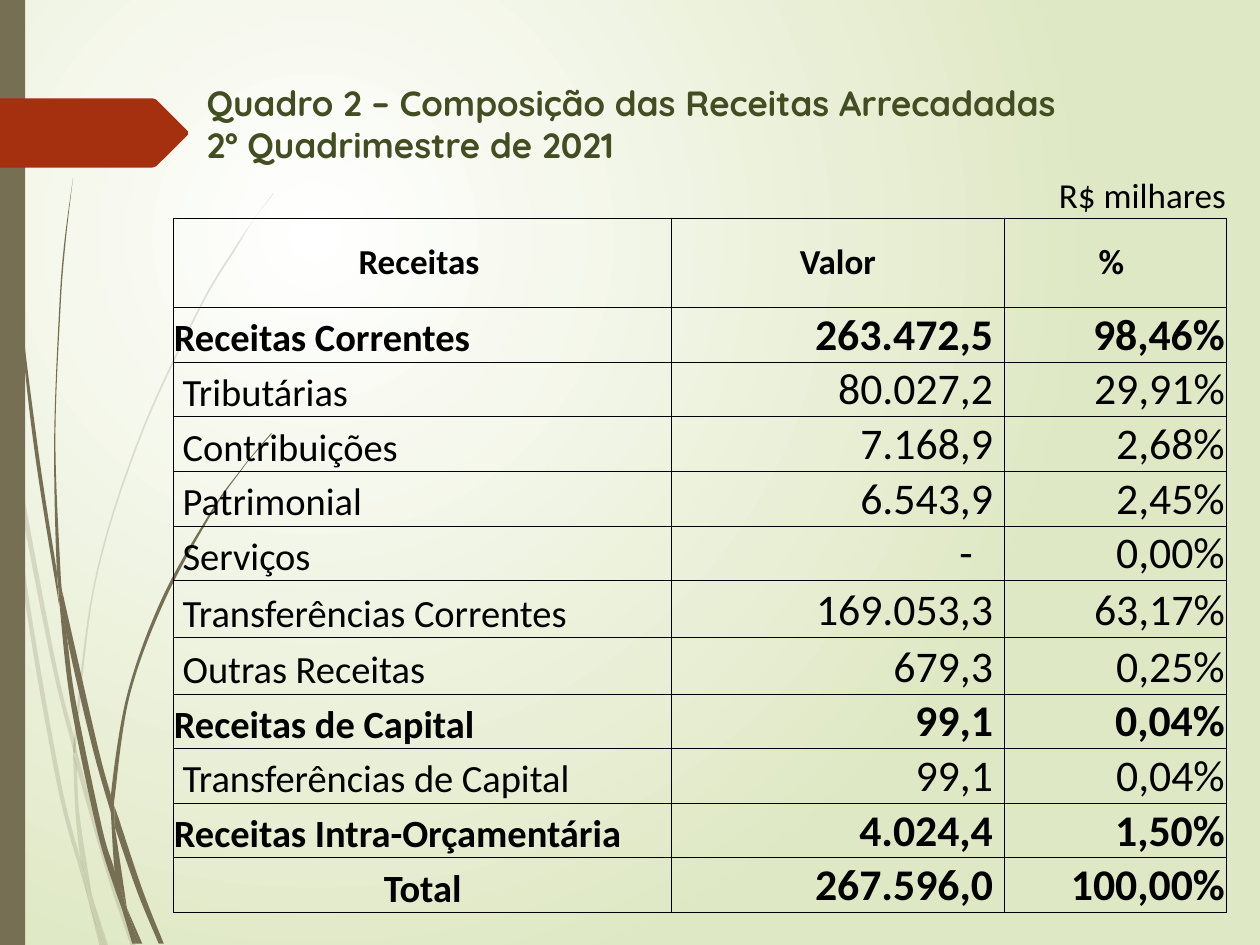
from lxml import etree
from pptx import Presentation
from pptx import util as u
from pptx.dml.color import RGBColor
from pptx.enum import shapes, text
from pptx.oxml.ns import qn

OLIVE, RUST, TITLE_GREEN, BLACK = "766F54", "A53010", "424D22", "000000"
TITLE = "Quadro 2 – Composição das Receitas Arrecadadas\v2º Quadrimestre de 2021"
UNIT = "R$ milhares"
# label, column, right margin
HEADER = [("Receitas", 0, 0.06), ("Valor", 1, 0), ("%", 3, 0.06)]
# kind, name, value, share
REVENUES = [
    ("group", "Receitas Correntes", "263.472,5", "98,46%"),
    ("item", "Tributárias", "80.027,2", "29,91%"),
    ("item", "Contribuições", "7.168,9", "2,68%"),
    ("item", "Patrimonial", "6.543,9", "2,45%"),
    ("item", "Serviços", "-", "0,00%"),
    ("item", "Transferências Correntes", "169.053,3", "63,17%"),
    ("item", "Outras Receitas", "679,3", "0,25%"),
    ("group", "Receitas de Capital", "99,1", "0,04%"),
    ("item", "Transferências de Capital", "99,1", "0,04%"),
    ("group", "Receitas Intra-Orçamentária", "4.024,4", "1,50%"),
    ("total", "Total", "267.596,0", "100,00%"),
]
COLUMN_WIDTHS = (3.95, 0.9, 1.74, 1.76)
ROW_HEIGHTS = [0.33, 0.71] + [0.42] * 5 + [0.45] * 2 + [0.42] * 4

# Each blade of grass is closed by two smooth edges, in inches.
PALE_BLADES = [
    ([(0.08, 3.5), (0.06, 3.22), (0, 2.82)], [(0, 2.99), (0.07, 3.44), (0.08, 3.5)]),
    ([(0.1, 3.45), (0.43, 5.2), (0.59, 5.86)],
     [(0.59, 5.99), (0.4, 5.22), (0.12, 3.76), (0.1, 3.45)]),
    ([(0.61, 5.96), (0.64, 6.07), (0.88, 6.92), (1.08, 7.51)],
     [(1.04, 7.51), (0.85, 6.94), (0.61, 6.1)]),
    ([(0.73, 7.11), (0.86, 7.51)], [(0.83, 7.51), (0.73, 7.11)]),
    ([(0.08, 3.5), (0.12, 3.76), (0.22, 4.69), (0.48, 6.19), (0.64, 6.83), (0.7, 7.14)],
     [(0.64, 6.93), (0.45, 6.21), (0.19, 4.7), (0.08, 3.5)]),
    ([(0.58, 5.99), (0.61, 6.1), (0.63, 6.46), (0.73, 7.11)],
     [(0.67, 6.92), (0.64, 6.83), (0.6, 6.46), (0.58, 5.99)]),
    ([(0.61, 5.96), (0.61, 5.84), (0.76, 4.62), (1.11, 3.49), (1.59, 2.45), (1.87, 1.98),
      (2.01, 1.75), (2.17, 1.54)],
     [(2.17, 1.53), (2.01, 1.75), (1.86, 1.97), (1.58, 2.44), (1.1, 3.48), (0.75, 4.61),
      (0.59, 5.84), (0.61, 5.96)]),
    ([(0.7, 7.14), (0.82, 7.51)], [(0.79, 7.51), (0.7, 7.14)]),
    ([(0.58, 5.99), (0.59, 5.86), (0.61, 5.96)], [(0.61, 6.1), (0.58, 5.99)]),
    ([(0.65, 6.83), (0.67, 6.92), (0.73, 7.11), (0.83, 7.51)],
     [(0.82, 7.51), (0.7, 7.14), (0.65, 6.83)]),
]
DARK_BLADES = [
    ([(0.02, 0), (0.03, 0.48), (0.05, 1.1), (0.14, 2.33), (0.27, 3.55), (0.47, 4.81)],
     [(0.45, 4.53), (0.3, 3.55), (0.15, 2.32), (0.06, 1.09), (0.04, 0.48), (0.03, 0)]),
    ([(0.5, 4.72), (0.77, 5.9), (0.88, 6.31)],
     [(0.88, 6.45), (0.73, 5.92), (0.53, 5.05), (0.5, 4.72)]),
    ([(0.91, 6.41), (0.94, 6.49), (1.13, 7.06), (1.3, 7.49)],
     [(1.26, 7.49), (1.09, 7.08), (0.91, 6.56)]),
    ([(0.47, 4.77), (0.53, 5.05), (0.6, 5.56), (0.81, 6.57), (0.91, 6.91), (0.97, 7.22)],
     [(0.92, 7.08), (0.77, 6.59), (0.56, 5.57), (0.47, 4.77)]),
    ([(0.5, 4.72), (0.48, 4.53), (0.44, 3.49), (0.48, 2.45), (0.52, 1.93), (0.58, 1.41)],
     [(0.58, 1.41), (0.51, 1.93), (0.47, 2.45), (0.43, 3.49), (0.45, 4.49), (0.49, 4.72)]),
    ([(1, 7.19), (1.13, 7.49)], [(1.1, 7.49), (1, 7.19)]),
    ([(0.45, 4.49), (0.49, 4.72), (0.5, 4.72), (0.53, 5.05)], [(0.47, 4.77), (0.45, 4.49)]),
    ([(0.91, 6.41), (0.91, 6.33), (1.03, 5.52), (1.31, 4.76), (1.69, 4.06), (1.91, 3.74),
      (2.03, 3.59), (2.16, 3.44)],
     [(2.15, 3.44), (2.03, 3.58), (1.91, 3.73), (1.68, 4.05), (1.29, 4.74), (1.01, 5.51),
      (0.88, 6.31), (0.91, 6.41)]),
    ([(0.97, 7.22), (1.08, 7.49)], [(1.05, 7.49), (0.97, 7.22)]),
    ([(0.88, 6.45), (0.91, 6.56), (1, 7.16), (1, 7.19)],
     [(0.96, 7.06), (0.91, 6.91), (0.88, 6.45)]),
    ([(0.88, 6.45), (0.88, 6.31), (0.91, 6.41)], [(0.91, 6.56), (0.88, 6.45)]),
    ([(0.91, 6.91), (0.96, 7.06), (1, 7.19), (1.1, 7.49)],
     [(1.08, 7.49), (0.97, 7.22), (0.91, 6.91)]),
]
TITLE_MARKER = [(0, 0.78), (1.21, 0.78), (1.24, 0.79), (1.49, 1.04), (1.49, 1.07),
                (1.24, 1.32), (1.21, 1.33), (0, 1.33)]


def color(hex_string):
    return RGBColor.from_string(hex_string)


def paint(shape, fill, opacity=100):
    shape.shadow.inherit = False
    shape.fill.solid()
    shape.fill.fore_color.rgb = color(fill)
    shape.line.fill.background()
    if opacity < 100:
        tint = next(shape.element.spPr.iter(qn("a:srgbClr")))
        etree.SubElement(tint, qn("a:alpha"), val=str(opacity * 1000))


def add_outline(slide, points, fill, opacity=100):
    corners = [(u.Inches(x), u.Inches(y)) for x, y in points]
    builder = slide.shapes.build_freeform(*corners[0])
    builder.add_line_segments(corners[1:], close=True)
    shape = builder.convert_to_shape()
    paint(shape, fill, opacity)
    return shape


def add_blade(slide, edges, opacity):
    """Add an outline and bend the segments along each edge into cubic curves."""
    shape = add_outline(slide, edges[0] + edges[1], OLIVE, opacity)
    segments = list(shape.element.iter(qn("a:lnTo")))
    for edge, first in zip(edges, (0, len(edges[0]))):
        padded = [edge[0], *edge, edge[-1]]
        quads = zip(padded, padded[1:], padded[2:], padded[3:])
        for segment, (before, start, end, after) in zip(segments[first:], quads):
            curve = etree.Element(qn("a:cubicBezTo"))
            for anchor, tail, head in ((start, before, end), (end, after, start)):
                x, y = (u.Inches(a + (h - t) / 6) for a, t, h in zip(anchor, tail, head))
                etree.SubElement(curve, qn("a:pt"), x=str(x - shape.left), y=str(y - shape.top))
            curve.append(segment[0])
            segment.getparent().replace(segment, curve)


def set_background(slide):
    fill = slide.background.fill
    fill.gradient()
    for stop, position, shade in zip(fill.gradient_stops, (0, 1), ("FFFFFF", "DFE8C4")):
        stop.position = position
        stop.color.rgb = color(shade)
    linear = next(slide.element.iter(qn("a:lin")))
    radial = etree.Element(qn("a:path"), path="circle")
    etree.SubElement(radial, qn("a:fillToRect"), l="50000", t="50000", r="100000", b="100000")
    linear.getparent().replace(linear, radial)


def format_text(paragraph, size, font_name, hex_string, bold):
    for run in paragraph.runs:
        run.font.size, run.font.name, run.font.bold = u.Pt(size), font_name, bold
        run.font.color.rgb = color(hex_string)


def set_borders(cell, visible_sides):
    properties = cell._tc.get_or_add_tcPr()
    for index, side in enumerate("LRTB"):
        line = etree.Element(qn(f"a:ln{side}"), w=str(u.Pt(0.5)))
        if side in visible_sides:
            solid = etree.SubElement(line, qn("a:solidFill"))
            etree.SubElement(solid, qn("a:srgbClr"), val=BLACK)
        else:
            etree.SubElement(line, qn("a:noFill"))
        properties.insert(index, line)


def write_cell(cell, content, align, size=20, bold=False, middle=False, left=0, right=0, top=0):
    cell.vertical_anchor = text.MSO_ANCHOR.MIDDLE if middle else text.MSO_ANCHOR.BOTTOM
    cell.margin_left, cell.margin_right, cell.margin_top = map(u.Inches, (left, right, top))
    paragraph = cell.text_frame.paragraphs[0]
    paragraph.text = content
    paragraph.alignment = align
    format_text(paragraph, size, "Calibri", BLACK, bold)


def add_revenue_table(slide):
    table = slide.shapes.add_table(
        len(ROW_HEIGHTS), len(COLUMN_WIDTHS), u.Inches(1.38), u.Inches(1.39),
        u.Inches(sum(COLUMN_WIDTHS)), u.Inches(sum(ROW_HEIGHTS))).table
    table.first_row = table.horz_banding = False
    for column, width in zip(table.columns, COLUMN_WIDTHS):
        column.width = u.Inches(width)
    for index, height in enumerate(ROW_HEIGHTS):
        table.rows[index].height = u.Inches(height)
        for cell in table.rows[index].cells:
            cell.margin_left = cell.margin_right = cell.margin_top = cell.margin_bottom = 0
            cell.fill.background()
            set_borders(cell, "LRTB" if index else "B")
        if index:
            table.cell(index, 1).merge(table.cell(index, 2))

    align = text.PP_ALIGN
    write_cell(table.cell(0, 3), UNIT, align.RIGHT)
    for label, column, right in HEADER:
        write_cell(table.cell(1, column), label, align.CENTER, bold=True, middle=True, right=right)
    for row, (kind, name, value, share) in enumerate(REVENUES, start=2):
        bold = kind != "item"
        write_cell(table.cell(row, 0), name, align.CENTER if kind == "total" else align.LEFT,
                   22, bold, left=0 if bold else 0.07)
        write_cell(table.cell(row, 1), value, align.RIGHT, 25, bold,
                   right=0.25 if value == "-" else 0.09, top=0.01)
        write_cell(table.cell(row, 3), share, align.RIGHT, 25, bold, right=0.01, top=0.01)


def format_title(title):
    title.left, title.top, title.width, title.height = map(u.Inches, (1.54, 0.6, 8.98, 0.5))
    frame = title.text_frame
    frame.text = TITLE
    frame.word_wrap = True
    frame.auto_size = text.MSO_AUTO_SIZE.NONE
    frame.vertical_anchor = text.MSO_ANCHOR.TOP
    frame.paragraphs[0].alignment = text.PP_ALIGN.LEFT
    format_text(frame.paragraphs[0], 20, "Quicksand", TITLE_GREEN, True)


def main():
    presentation = Presentation()
    presentation.slide_width, presentation.slide_height = u.Inches(10), u.Inches(7.5)
    slide = presentation.slides.add_slide(presentation.slide_layouts[5])
    set_background(slide)
    for blades, opacity in ((PALE_BLADES, 20), (DARK_BLADES, 100)):
        for edges in blades:
            add_blade(slide, edges, opacity)
    side_bar = slide.shapes.add_shape(
        shapes.MSO_SHAPE.RECTANGLE, 0, 0, u.Inches(0.2), presentation.slide_height)
    paint(side_bar, OLIVE)
    add_outline(slide, TITLE_MARKER, RUST)
    title = slide.shapes.title
    format_title(title)
    title.element.getparent().append(title.element)
    add_revenue_table(slide)
    presentation.save("out.pptx")


if __name__ == "__main__":
    main()
